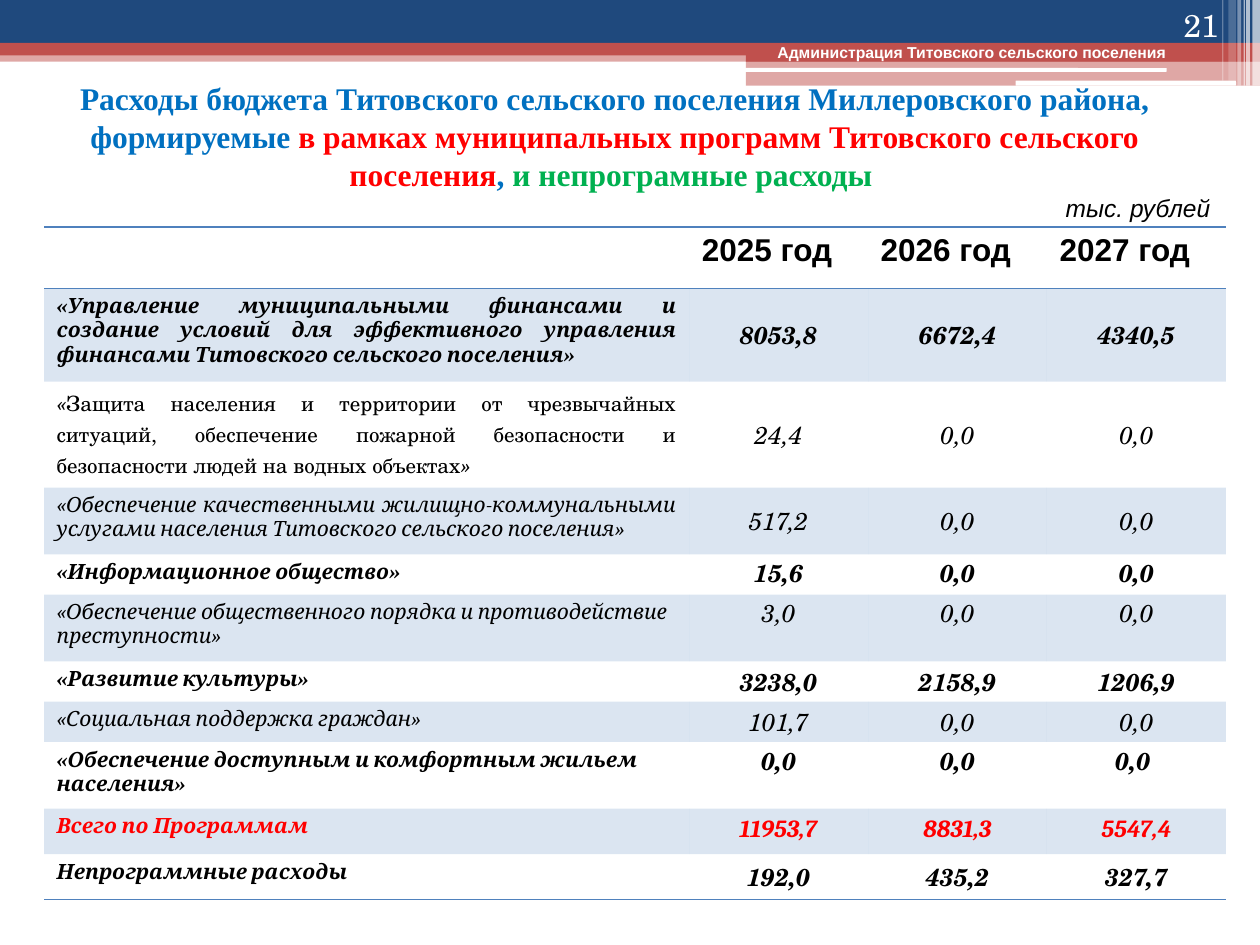
"""Build the budget slide: header bands, title and table of programme spending."""
from lxml import etree
from pptx import Presentation
from pptx import util as u
from pptx.dml.color import RGBColor
from pptx.enum import shapes, text
from pptx.oxml.ns import qn

HUE = {"navy": "1F497D", "brick": "C0504D", "white": "FFFFFF", "black": "000000",
       "sky": "0070C0", "red": "FF0000", "green": "00B050", "blue": "4F81BD"}
SERIF, BOOK, SANS = "Cambria", "TeX Gyre Schola", "Arial"
RECT, ROUND = shapes.MSO_SHAPE.RECTANGLE, shapes.MSO_SHAPE.ROUNDED_RECTANGLE
MID, TOP, LOW = (text.MSO_ANCHOR.MIDDLE, text.MSO_ANCHOR.TOP, text.MSO_ANCHOR.BOTTOM)
LEFT, MIDST, RIGHT, JUST = (text.PP_ALIGN.LEFT, text.PP_ALIGN.CENTER,
                            text.PP_ALIGN.RIGHT, text.PP_ALIGN.JUSTIFY)

BANDS = [  # kind, box, colour, opacity
    (RECT, (0, 0.4, 10, 0.09), "brick", 50),
    (RECT, (0, 0, 10, 0.34), "navy", 100),
    (RECT, (0, 0.34, 10, 0.1), "brick", 100),
    (RECT, (5.92, 0.39, 4.08, 0.1), "brick", 100),
    (RECT, (5.92, 0.48, 4.08, 0.2), "brick", 50),
    (ROUND, (5.91, 0.54, 3.35, 0.03), "white", 100),
    (ROUND, (8.06, 0.64, 1.75, 0.04), "white", 100),
]
BARS = [(9.94, 0.06, 0.68, 65), (9.89, 0.03, 0.68, 65), (9.87, 0.01, 0.68, 60),
        (9.82, 0.03, 0.68, 40), (9.75, 0.06, 0.64, 20), (9.7, 0.01, 0.64, 30)]
TITLE = [
    ("Расходы бюджета Титовского сельского поселения Миллеровского района, формируемые ", "sky"),
    ("в рамках муниципальных программ Титовского сельского поселения", "red"),
    (", ", "sky"),
    ("и непрограмные расходы ", "green"),
]
NOTES = [  # box, words, font, size, colour, bold, italic, align, anchor
    ((8.94, 0, 0.83, 0.4), "21", BOOK, 18, "white", False, False, RIGHT, LOW),
    ((8.36, 1.48, 1.42, 0.34), "тыс. рублей", SANS, 14, "black", False, True, LEFT, TOP),
    ((5.7, 0.29, 4.02, 0.25), "Администрация Титовского сельского поселения",
     SANS, 9, "white", True, False, MIDST, TOP),
]
YEARS = ["2025 год", "2026 год", "2027 год"]
ROWS = [  # name, values, height, bold, name align, value anchor
    ("«Управление муниципальными финансами и создание условий для эффективного управления "
     "финансами Титовского сельского поселения»",
     ("8053,8", "6672,4", "4340,5"), 0.74, True, JUST, MID),
    ("«Защита населения и территории от чрезвычайных ситуаций, обеспечение пожарной "
     "безопасности и безопасности людей на водных объектах»",
     ("24,4", "0,0", "0,0"), 0.84, False, JUST, MID),
    ("«Обеспечение качественными жилищно-коммунальными услугами населения Титовского "
     "сельского поселения»", ("517,2", "0,0", "0,0"), 0.53, False, JUST, MID),
    ("«Информационное общество»", ("15,6", "0,0", "0,0"), 0.32, True, LEFT, TOP),
    ("«Обеспечение общественного порядка и противодействие преступности»",
     ("3,0", "0,0", "0,0"), 0.53, False, LEFT, TOP),
    ("«Развитие культуры»", ("3238,0", "2158,9", "1206,9"), 0.32, True, LEFT, MID),
    ("«Социальная поддержка граждан»", ("101,7", "0,0", "0,0"), 0.32, False, LEFT, MID),
    ("«Обеспечение доступным и комфортным жильем населения»",
     ("0,0", "0,0", "0,0 "), 0.53, True, LEFT, TOP),
    ("Всего по Программам", ("11953,7", "8831,3", "5547,4"), 0.36, True, LEFT, TOP),
    ("Непрограммные расходы", ("192,0", "435,2", "327,7"), 0.36, True, LEFT, MID),
]
UPRIGHT, TOTAL = 1, 8
HEAD, WIDTHS = 0.49, [5.12, 1.42, 1.42, 1.42]


def inch(box):
    return [u.Inches(v) for v in box]


def paint(fill, node, hue, alpha=100):
    fill.solid()
    fill.fore_color.rgb = RGBColor.from_string(HUE[hue])
    if alpha < 100:
        tint = next(node.iter(qn("a:srgbClr")))
        etree.SubElement(tint, qn("a:alpha")).set("val", str(alpha * 1000))


def write(par, words, face, size, hue, bold=False, slant=False):
    run = par.add_run()
    run.text = words
    font = run.font
    font.name, font.size, font.bold, font.italic = face, u.Pt(size), bold, slant
    font.color.rgb = RGBColor.from_string(HUE[hue])


def block(slide, kind, box, hue, alpha):
    item = slide.shapes.add_shape(kind, *inch(box))
    item.shadow.inherit = False
    item.line.fill.background()
    paint(item.fill, item._element.spPr, hue, alpha)


def rule(cell, side):
    line = etree.Element(qn("a:ln" + side), w=str(u.Pt(1)))
    fill = etree.SubElement(line, qn("a:solidFill"))
    etree.SubElement(fill, qn("a:srgbClr"), val=HUE["blue"])
    cell._tc.get_or_add_tcPr().insert(0, line)


def name_cell(par, row, name, bold, hue):
    parts = [(name, SERIF, True)]
    if row == UPRIGHT:
        parts = [(name[0], SERIF, True), (name[1:-1], BOOK, False), (name[-1], SERIF, True)]
    for words, face, slant in parts:
        write(par, words, face, 12, hue, bold, slant)


def fill_table(slide):
    tall = [HEAD] + [row[2] for row in ROWS]
    frame = slide.shapes.add_table(len(tall), len(WIDTHS),
                                   *inch((0.35, 1.8, sum(WIDTHS), sum(tall))))
    table = frame.table
    table.horz_banding = False
    style = next(table._tbl.iter(qn("a:tableStyleId")))
    style.text = "{2D5ABB26-0587-4C30-8999-92F81FD0307C}"
    for col, wide in zip(table.columns, WIDTHS):
        col.width = u.Inches(wide)
    for row, high in zip(table.rows, tall):
        row.height = u.Inches(high)
    for col in range(len(WIDTHS)):
        top = table.cell(0, col)
        top.fill.background()
        rule(top, "B")
        rule(top, "T")
        if col:
            write(top.text_frame.paragraphs[0], YEARS[col - 1], SANS, 18, "black", True)
    for row, (name, values, _, bold, align, anchor) in enumerate(ROWS):
        hue = "red" if row == TOTAL else "black"
        for col, words in enumerate((name, *values)):
            cell = table.cell(row + 1, col)
            par = cell.text_frame.paragraphs[0]
            if row % 2:
                cell.fill.background()
            else:
                paint(cell.fill, cell._tc.get_or_add_tcPr(), "blue", 20)
            if row == len(ROWS) - 1:
                rule(cell, "B")
            if col == 0:
                par.alignment = align
                name_cell(par, row, words, bold, hue)
                continue
            par.alignment = MIDST
            cell.vertical_anchor = anchor
            if row != TOTAL:
                cell.margin_left = cell.margin_right = u.Inches(0.07)
                cell.margin_top = cell.margin_bottom = 0
            write(par, words, SERIF if row == TOTAL else BOOK, 14, hue, bold, True)


def main():
    deck = Presentation()
    deck.slide_width, deck.slide_height = inch((10, 7.5))
    slide = deck.slides.add_slide(deck.slide_layouts[5])
    for band in BANDS:
        block(slide, *band)
    for left, wide, high, alpha in BARS:
        block(slide, RECT, (left, 0, wide, high), "white", alpha)
    title = slide.shapes.title
    title.left, title.top, title.width, title.height = inch((0, 0.6, 9.76, 0.96))
    title.text_frame.vertical_anchor = MID
    par = title.text_frame.paragraphs[0]
    par.alignment = MIDST
    for words, hue in TITLE:
        write(par, words, "Times New Roman", 18, hue, True)
    fill_table(slide)
    for box, words, face, size, hue, bold, slant, align, anchor in NOTES:
        frame = slide.shapes.add_textbox(*inch(box)).text_frame
        frame.word_wrap = True
        frame.vertical_anchor = anchor
        frame.paragraphs[0].alignment = align
        write(frame.paragraphs[0], words, face, size, hue, bold, slant)
    deck.save("out.pptx")


if __name__ == "__main__":
    main()
